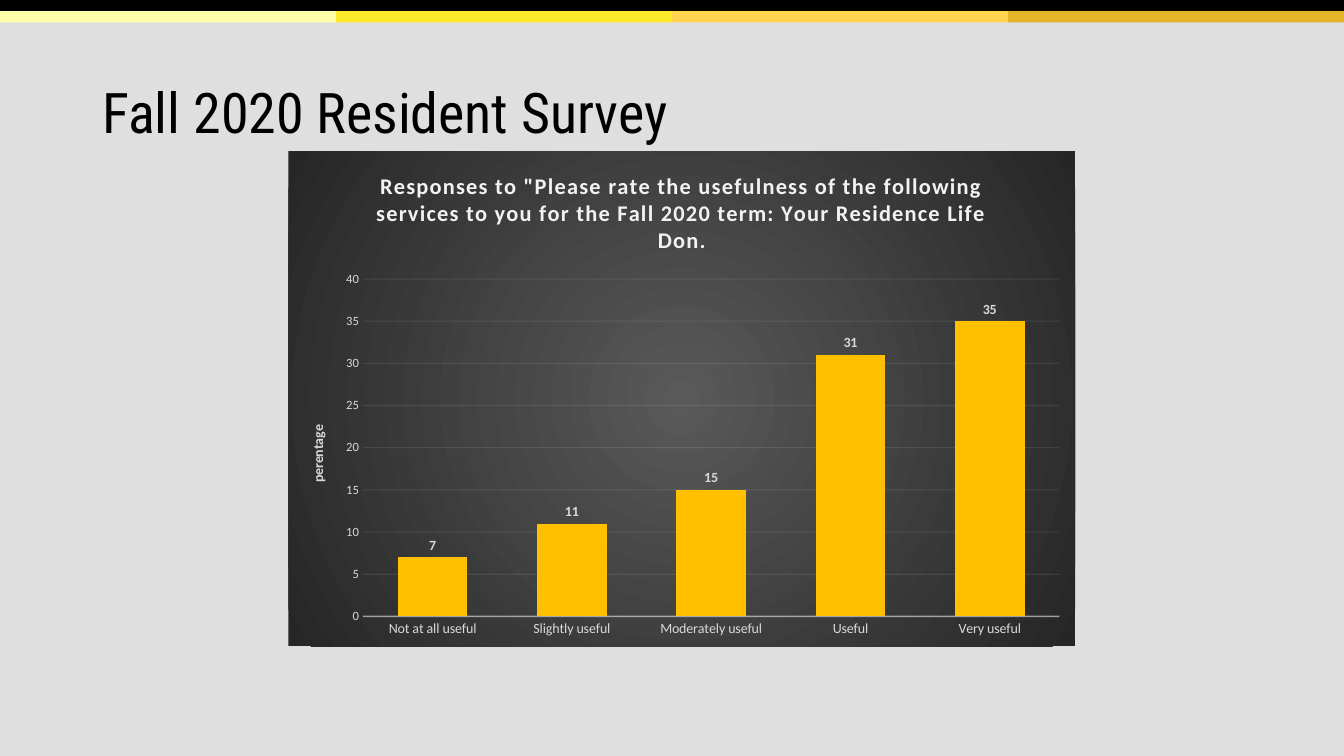
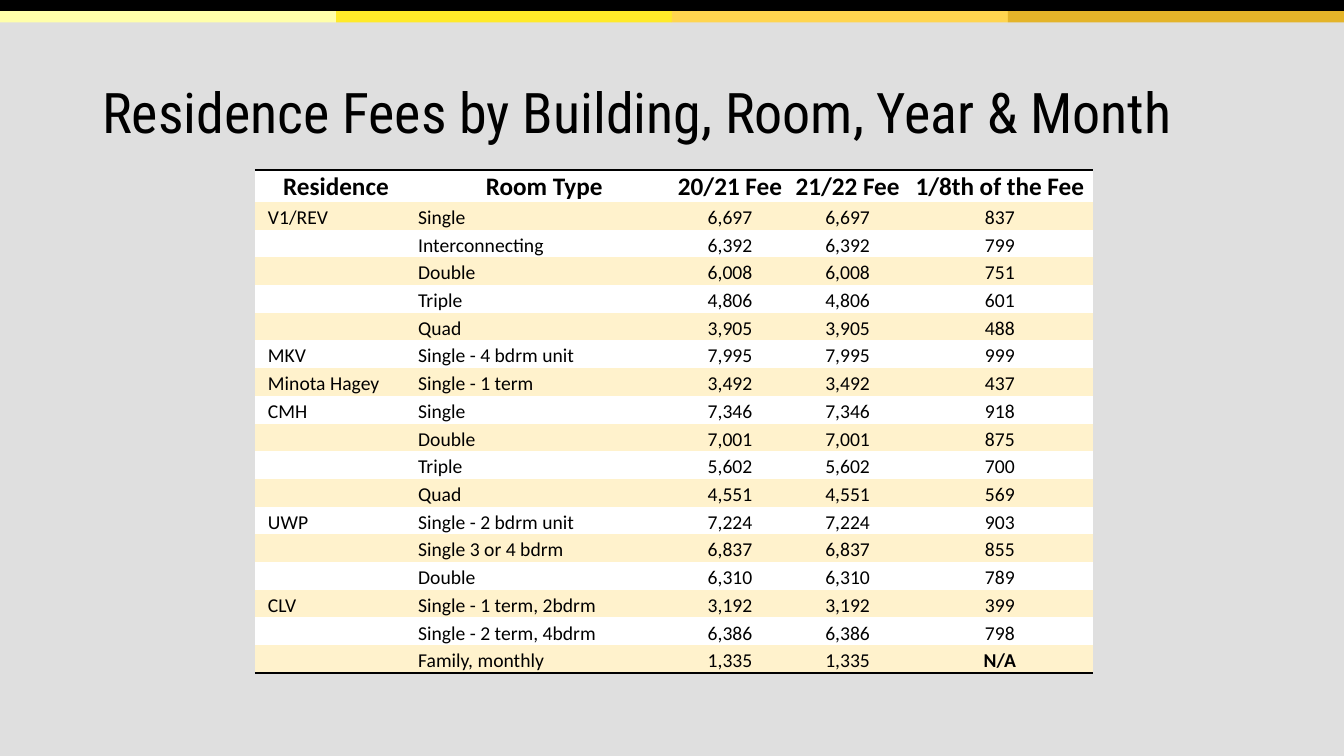
"""Build two residence slides: a survey chart and a fee table."""
from dataclasses import dataclass

from pptx import Presentation
from pptx.chart.data import CategoryChartData as ChartData
from pptx.dml.color import RGBColor as RGB
from pptx.enum.chart import XL_CHART_TYPE as Kind, XL_LABEL_POSITION as Spot, XL_TICK_MARK as Tick
from pptx.enum.shapes import MSO_SHAPE as Form
from pptx.enum.text import MSO_ANCHOR as Anchor, PP_ALIGN as Align
from pptx.oxml import parse_xml
from pptx.oxml.ns import nsdecls, qn
from pptx.util import Pt

SURVEY = {
    "title": "Fall 2020 Resident Survey",
    "head": 'Responses to "Please rate the usefulness of the following services '
            'to you for the Fall 2020 term: Your Residence Life Don.',
    "axis": "perentage",
    "votes": {"Not at all useful": 7, "Slightly useful": 11, "Moderately useful": 15,
              "Useful": 31, "Very useful": 35},
}
FEES = {
    "title": "Residence Fees by Building, Room, Year & Month",
    "head": ("Residence", "Room Type", "20/21 Fee", "21/22 Fee", "1/8th of the Fee"),
    "rows": [
        ("V1/REV", "Single", "6,697", "6,697", "837"),
        ("", "Interconnecting", "6,392", "6,392", "799"),
        ("", "Double", "6,008", "6,008", "751"),
        ("", "Triple", "4,806", "4,806", "601"),
        ("", "Quad", "3,905", "3,905", "488"),
        ("MKV", "Single - 4 bdrm unit", "7,995", "7,995", "999"),
        ("Minota Hagey", "Single - 1 term", "3,492", "3,492", "437"),
        ("CMH", "Single", "7,346", "7,346", "918"),
        ("", "Double", "7,001", "7,001", "875"),
        ("", "Triple", "5,602", "5,602", "700"),
        ("", "Quad", "4,551", "4,551", "569"),
        ("UWP", "Single - 2 bdrm unit", "7,224", "7,224", "903"),
        ("", "Single 3 or 4 bdrm", "6,837", "6,837", "855"),
        ("", "Double", "6,310", "6,310", "789"),
        ("CLV", "Single - 1 term, 2bdrm", "3,192", "3,192", "399"),
        ("", "Single - 2 term, 4bdrm", "6,386", "6,386", "798"),
        ("", "Family, monthly", "1,335", "1,335", "N/A"),
    ],
}
WIDTHS = (116, 181.5, 84, 84, 133.5)
WIDE, HIGH = 960, 540
PLAIN = "{2D5ABB26-0587-4C30-8999-92F81FD0307C}"


@dataclass(frozen=True)
class Theme:
    """Colours, fonts and type sizes."""
    back: str = "DFDFDF"
    ink: str = "000000"
    bands: tuple = ("FFFFAA", "FFEA29", "FFD54F", "E4B429")
    bar: str = "FFC000"
    glow: str = "595959"
    edge: str = "262626"
    pale: str = "F2F2F2"
    soft: str = "D9D9D9"
    rows: tuple = ("FFFFFF", "FFF2CC")
    face: str = "Roboto Condensed"
    body: str = "Calibri"
    title: int = 40
    head: int = 18
    cell: int = 14
    chart: int = 16
    label: int = 10
    tick: int = 9


T = Theme()


def style(font, size, color, bold=False, face=T.body):
    font.name, font.size, font.bold = face, Pt(size), bold
    font.color.rgb = RGB.from_string(color)


def paint(fill, color):
    fill.solid()
    fill.fore_color.rgb = RGB.from_string(color)


def block(slide, x, y, w, h, color):
    shape = slide.shapes.add_shape(Form.RECTANGLE, Pt(x), Pt(y), Pt(w), Pt(h))
    shape.shadow.inherit = False
    paint(shape.fill, color)
    shape.line.fill.background()


def page(deck, title):
    slide = deck.slides.add_slide(deck.slide_layouts[6])
    paint(slide.background.fill, T.back)
    block(slide, 0, 0, WIDE, 8, T.ink)
    step = WIDE / len(T.bands)
    for i, color in enumerate(T.bands):
        block(slide, i * step, 8, step, 8, color)
    frame = slide.shapes.add_textbox(Pt(66), Pt(57), Pt(828), Pt(43)).text_frame
    frame.word_wrap = True
    frame.vertical_anchor = Anchor.TOP
    para = frame.paragraphs[0]
    para.text, para.line_spacing = title, 0.9
    style(para.font, T.title, T.ink, face=T.face)
    return slide


def rule(line, width, alpha):
    line.width = Pt(width)
    paint(line.fill, T.pale)
    tint = line.fill._xPr.find(".//" + qn("a:srgbClr"))
    tint.append(parse_xml(f'<a:alpha {nsdecls("a")} val="{alpha * 1000}"/>'))


def caption(owner, text, size, color):
    para = owner.text_frame.paragraphs[0]
    para.text = text
    style(para.font, size, color, True)
    return para


def glow(chart):
    stops = "".join(f'<a:gs pos="{pos}"><a:srgbClr val="{color}"/></a:gs>'
                    for pos, color in ((0, T.glow), (100000, T.edge)))
    chart._chartSpace.find(qn("c:chart")).addnext(parse_xml(
        f'<c:spPr {nsdecls("c", "a")}><a:gradFill><a:gsLst>{stops}</a:gsLst>'
        '<a:path path="circle"><a:fillToRect l="50000" t="50000" r="50000" b="50000"/></a:path>'
        '</a:gradFill><a:ln><a:noFill/></a:ln></c:spPr>'))


def survey(deck):
    slide = page(deck, SURVEY["title"])
    data = ChartData()
    data.categories = list(SURVEY["votes"])
    data.add_series("Series 1", list(SURVEY["votes"].values()))
    chart = slide.shapes.add_chart(Kind.COLUMN_CLUSTERED, Pt(206), Pt(108),
                                   Pt(562), Pt(353.5), data).chart
    style(chart.font, T.label, T.soft)
    glow(chart)
    chart.has_legend = False
    para = caption(chart.chart_title, SURVEY["head"], T.chart, T.pale)
    para._p.find(".//" + qn("a:defRPr")).set("spc", "100")
    chart.chart_title.include_in_layout = False

    plot = chart.plots[0]
    plot.gap_width, plot.overlap, plot.vary_by_categories = 100, -24, False
    paint(plot.series[0].format.fill, T.bar)
    plot.has_data_labels = True
    tags = plot.data_labels
    tags.show_value, tags.position = True, Spot.OUTSIDE_END
    style(tags.font, T.label, T.soft, True)

    cat, val = chart.category_axis, chart.value_axis
    for axis, size in ((cat, T.label), (val, T.tick)):
        axis.major_tick_mark = axis.minor_tick_mark = Tick.NONE
        style(axis.tick_labels.font, size, T.soft)
    rule(cat.format.line, 1, 54)
    val.format.line.fill.background()
    val.minimum_scale, val.maximum_scale, val.major_unit = 0, 40, 5
    rule(val.major_gridlines.format.line, 0.75, 10)
    caption(val.axis_title, SURVEY["axis"], T.label, T.soft)


def border(cell, side):
    cell._tc.get_or_add_tcPr().insert(0, parse_xml(
        f'<a:{side} {nsdecls("a")} w="{Pt(2)}"><a:solidFill><a:srgbClr val="{T.ink}"/>'
        f'</a:solidFill></a:{side}>'))


def fees(deck):
    slide = page(deck, FEES["title"])
    rows = [FEES["head"], *FEES["rows"]]
    table = slide.shapes.add_table(len(rows), len(WIDTHS), Pt(182), Pt(121.5),
                                   Pt(sum(WIDTHS)), Pt(360)).table
    table.first_row = table.horz_banding = False
    table._tbl.tblPr.find(qn("a:tableStyleId")).text = PLAIN
    for col, width in zip(table.columns, WIDTHS):
        col.width = Pt(width)
    for r, row in enumerate(rows):
        table.rows[r].height = Pt(19.8 if r else 22.8)
        for c, text in enumerate(row):
            cell = table.cell(r, c)
            paint(cell.fill, T.rows[r % 2])
            cell.margin_left = Pt(9.4 if r and c == 0 else 0.7)
            cell.margin_right = cell.margin_top = Pt(0.7)
            cell.margin_bottom = Pt(0)
            cell.vertical_anchor = Anchor.BOTTOM
            para = cell.text_frame.paragraphs[0]
            para.text = text
            para.alignment = Align.LEFT if r and c < 2 else Align.CENTER
            size = T.cell if r else T.head
            style(para.font, size, T.ink, r == 0 or text == "N/A")
            if not text:
                para._p.append(parse_xml(f'<a:endParaRPr {nsdecls("a")} sz="{size * 100}"/>'))
            if r == 0:
                border(cell, "lnT")
            elif r == len(rows) - 1:
                border(cell, "lnB")


def main():
    deck = Presentation()
    deck.slide_width, deck.slide_height = Pt(WIDE), Pt(HIGH)
    survey(deck)
    fees(deck)
    deck.save("out.pptx")


if __name__ == "__main__":
    main()
